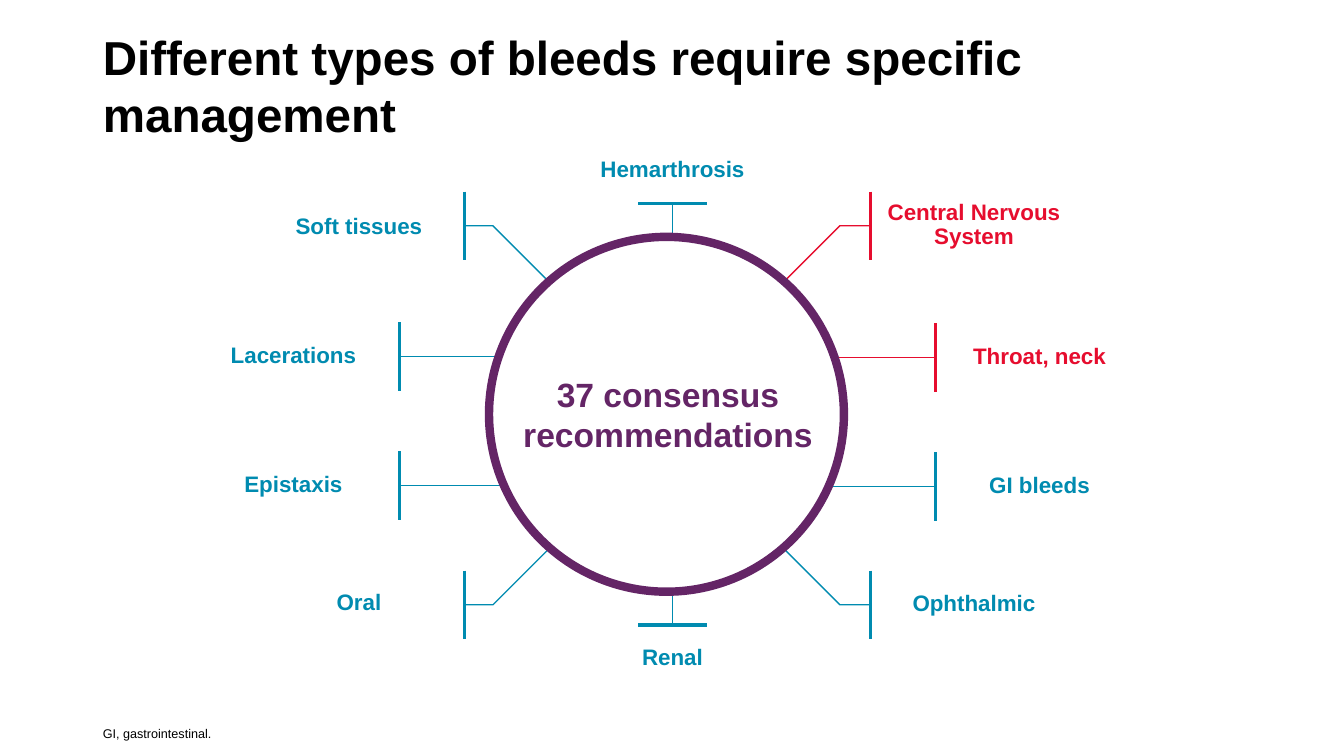
from pptx import Presentation, util as u
from pptx.dml.color import RGBColor
from pptx.enum import shapes as sh, text as tx
from pptx.oxml.ns import qn
from lxml import etree

TEAL, RED, PLUM = "008BB0", "E60D2E", "642566"
MID, WIDE, HIGH = 6.61, 2.08, 0.67  # circle centre, label width and height

deck = Presentation()
deck.slide_width, deck.slide_height = u.Inches(13.33), u.Inches(7.5)
slide = deck.slides.add_slide(deck.slide_layouts[1])
items = slide.shapes


def write(shape, words, size, hue, bold, align, anchor):
    frame = shape.text_frame
    frame.text = words
    frame.word_wrap = True
    frame.auto_size = tx.MSO_AUTO_SIZE.NONE
    frame.vertical_anchor = anchor
    para = frame.paragraphs[0]
    para.alignment = align
    font = para.runs[0].font
    font.name, font.size, font.bold = "Arial", u.Pt(size), bold
    font.color.rgb = RGBColor.from_string(hue)
    return para


def draw(x1, y1, x2, y2, hue, width):
    ends = [u.Inches(n) for n in (x1, y1, x2, y2)]
    line = items.add_connector(sh.MSO_CONNECTOR.STRAIGHT, *ends)
    line.line.color.rgb = RGBColor.from_string(hue)
    line.line.width = u.Pt(width)
    etree.SubElement(line._element.spPr, qn("a:effectLst"))
    return line


LEFT, CENTER = tx.PP_ALIGN.LEFT, tx.PP_ALIGN.CENTER
MIDDLE, BOTTOM = tx.MSO_ANCHOR.MIDDLE, tx.MSO_ANCHOR.BOTTOM

# Title and footnote
title, note = items.title, slide.placeholders[1]
for box, spot in ((title, (0.92, 0.25, 11.5, 1.19)), (note, (0.92, 6.95, 10.85, 0.4))):
    box.left, box.top, box.width, box.height = [u.Inches(n) for n in spot]
write(title, "Different types of bleeds require specific management",
      34, "000000", True, LEFT, MIDDLE)
para = write(note, "GI, gastrointestinal.", 9, "000000", False, LEFT, BOTTOM)
para.space_before = u.Pt(0)
props = para._p.get_or_add_pPr()
props.set("marL", "0")
props.set("indent", "0")
etree.SubElement(props, qn("a:buNone"))
note.text_frame.margin_bottom = 0

# Labels: words, side (0 for above or below), reach from centre, top, colour
near, far = 2.01, 2.66
bleeds = [
    ("Hemarthrosis", 0, 0, 1.35, TEAL),
    ("Central Nervous System", 1, near, 1.9, RED),
    ("Throat, neck", 1, far, 3.21, RED),
    ("GI bleeds", 1, far, 4.49, TEAL),
    ("Ophthalmic", 1, near, 5.66, TEAL),
    ("Renal", 0, 0, 6.2, TEAL),
    ("Oral", -1, near, 5.65, TEAL),
    ("Epistaxis", -1, far, 4.48, TEAL),
    ("Lacerations", -1, far, 3.2, TEAL),
    ("Soft tissues", -1, near, 1.92, TEAL),
]
bars = []
for words, side, reach, top, hue in bleeds:
    edge = MID + side * reach
    left = {-1: edge - WIDE, 0: 5.63, 1: edge}[side]
    label = items.add_shape(sh.MSO_SHAPE.RECTANGLE, u.Inches(left), u.Inches(top),
                            u.Inches(WIDE), u.Inches(HIGH))
    label.shadow.inherit = False
    label.fill.solid()
    label.fill.fore_color.rgb = RGBColor.from_string("FFFFFF")
    label.line.fill.background()
    write(label, words, 16, hue, True, CENTER, MIDDLE).line_spacing = 0.9
    frame = label.text_frame
    frame.margin_left = frame.margin_right = u.Inches(0.1)
    frame.margin_top = frame.margin_bottom = u.Inches(0.1)

    # Spoke from the label to the circle
    y = top + HIGH / 2
    if side == 0:
        above = top < 4
        end, inner = (top + HIGH, 2.81) if above else (top, 5.42)
        draw(6.67, end, 6.67, inner, hue, 1).begin_connect(label, 2 if above else 0)
        bars.append((6.33, end, 7.01, end, hue))
        continue
    if reach == far:
        spoke = draw(edge, y, MID + side * 1.64, y, hue, 1)
        spoke.begin_connect(label, 1 if side > 0 else 3)
    else:
        y = 2.24 if top < 4 else 6
        inner = 2.81 if top < 4 else 5.43
        bend = [(edge, y), (MID + side * 1.72, y), (MID + side * 1.15, inner)]
        dots = [(u.Inches(a), u.Inches(b)) for a, b in bend]
        path = items.build_freeform(*dots[0], scale=1.0)
        path.add_line_segments(dots[1:], close=False)
        elbow = path.convert_to_shape()
        elbow.shadow.inherit = False
        elbow.fill.background()
        elbow.line.color.rgb = RGBColor.from_string(hue)
        elbow.line.width = u.Pt(1)
    bars.append((edge + 0.01, y - 0.34, edge + 0.01, y + 0.34, hue))

# Central circle
ring = items.add_shape(sh.MSO_SHAPE.OVAL, u.Inches(4.85), u.Inches(2.35),
                       u.Inches(3.52), u.Inches(3.52))
ring.shadow.inherit = False
ring.fill.solid()
ring.fill.fore_color.rgb = RGBColor.from_string("FFFFFF")
ring.line.color.rgb = RGBColor.from_string(PLUM)
ring.line.width = u.Pt(6)
core = items.add_textbox(u.Inches(4.71), u.Inches(3.66), u.Inches(3.83), u.Inches(0.91))
write(core, "37 consensus recommendations", 24, PLUM, True, CENTER, tx.MSO_ANCHOR.TOP)

# Bars beside the labels
for *ends, hue in bars:
    draw(*ends, hue, 2.25)

deck.save("out.pptx")
